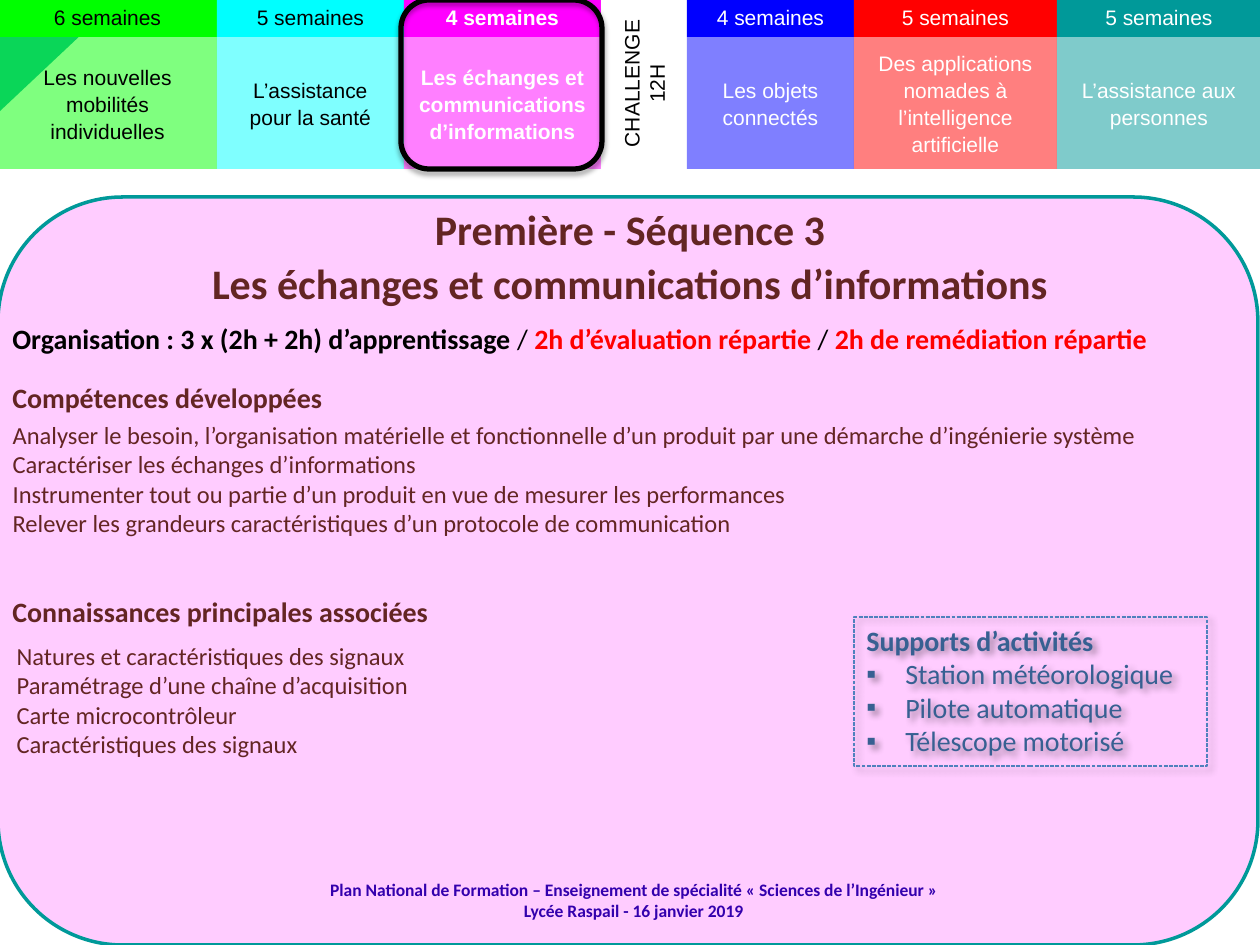
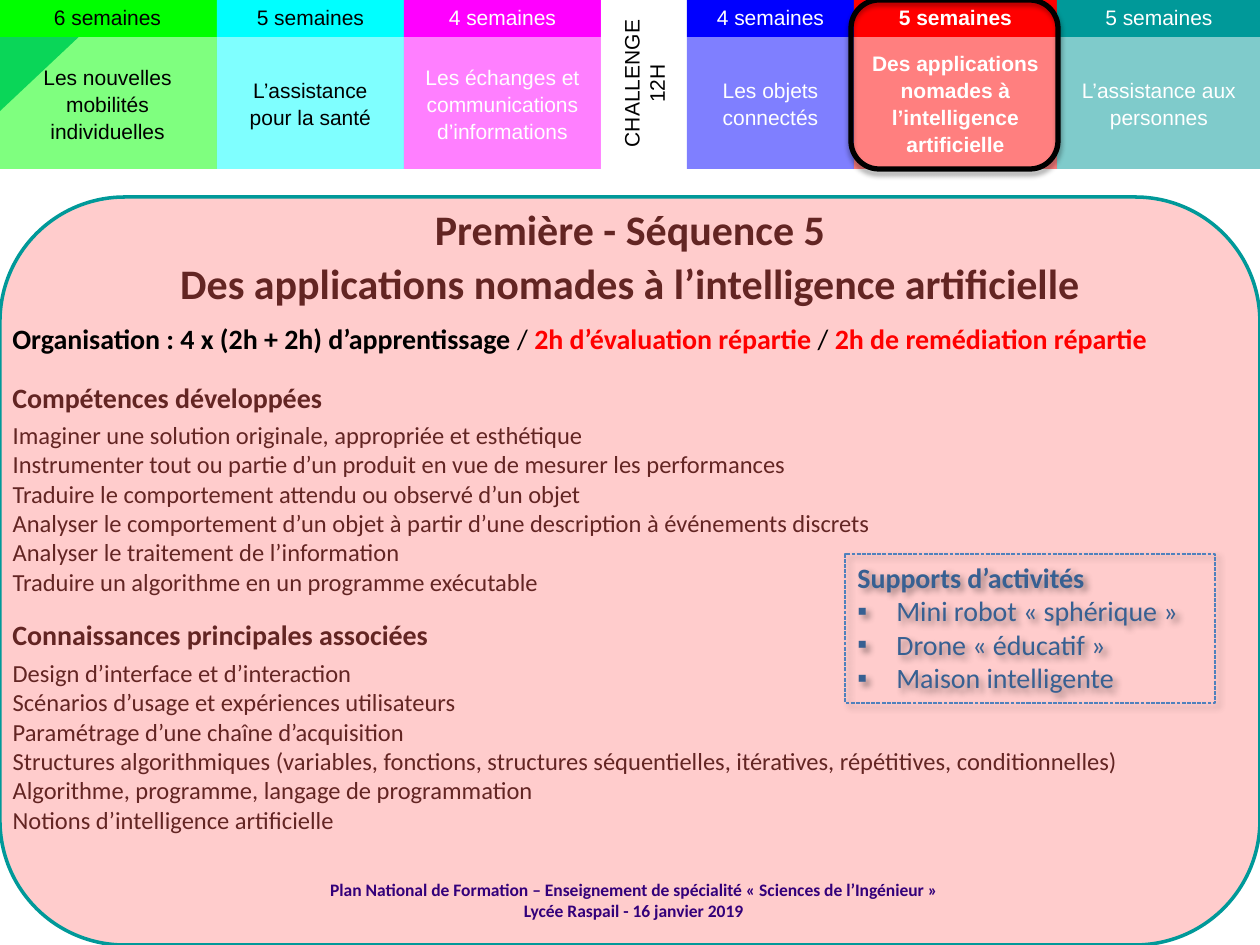
from lxml.etree import SubElement
from pptx import Presentation
from pptx.dml.color import RGBColor
from pptx.enum.dml import MSO_LINE
from pptx.enum.shapes import MSO_SHAPE as Shape
from pptx.enum.text import MSO_ANCHOR as Anchor, MSO_AUTO_SIZE as AutoSize, PP_ALIGN as Align
from pptx.oxml.ns import qn
from pptx.util import Pt

# Content: year timeline as (width, duration, theme, colour, text colour)
TIMELINE = [
    (219, "6 semaines", "Les nouvelles mobilités individuelles", "00FF00", "000000"),
    (187, "5 semaines", "L’assistance pour la santé", "00FFFF", "000000"),
    (197, "4 semaines", "Les échanges et communications d’informations", "FF00FF", "FFFFFF"),
    (86, None, "CHALLENGE 12H", "FFFFFF", "000000"),
    (167, "4 semaines", "Les objets connectés", "0000FF", "FFFFFF"),
    (203, "5 semaines", "Des applications nomades à l’intelligence artificielle", "FF0000", "FFFFFF"),
    (204, "5 semaines", "L’assistance aux personnes", "009999", "FFFFFF"),
]
FOOTER = [
    "Plan National de Formation – Enseignement de spécialité « Sciences de l’Ingénieur »",
    "Lycée Raspail - 16 janvier 2019",
]
SEQUENCES = [
    {
        "number": 3, "column": 2, "sessions": 3, "panel_left": -2,
        "theme": "Les échanges et communications d’informations",
        "skills": [
            "Analyser le besoin, l’organisation matérielle et fonctionnelle d’un produit "
            "par une démarche d’ingénierie système",
            "Caractériser les échanges d’informations",
            "Instrumenter tout ou partie d’un produit en vue de mesurer les performances",
            "Relever les grandeurs caractéristiques d’un protocole de communication",
        ],
        "knowledge": [
            "Natures et caractéristiques des signaux",
            "Paramétrage d’une chaîne d’acquisition",
            "Carte microcontrôleur",
            "Caractéristiques des signaux",
        ],
        "knowledge_heading_top": 588, "knowledge_at": (4, 634),
        "supports": ["Station météorologique", "Pilote automatique", "Télescope motorisé"],
        "supports_at": (854, 617, 353, 149),
    },
    {
        "number": 5, "column": 5, "sessions": 4, "panel_left": 0,
        "theme": "Des applications nomades à l’intelligence artificielle",
        "skills": [
            "Imaginer une solution originale, appropriée et esthétique",
            "Instrumenter tout ou partie d’un produit en vue de mesurer les performances",
            "Traduire le comportement attendu ou observé d’un objet",
            "Analyser le comportement d’un objet à partir d’une description à événements discrets",
            "Analyser le traitement de l’information",
            "Traduire un algorithme en un programme exécutable",
        ],
        "knowledge": [
            "Design d’interface et d’interaction",
            "Scénarios d’usage et expériences utilisateurs",
            "Paramétrage d’une chaîne d’acquisition",
            "Structures algorithmiques (variables, fonctions, structures séquentielles, "
            "itératives, répétitives, conditionnelles)",
            "Algorithme, programme, langage de programmation",
            "Notions d’intelligence artificielle",
        ],
        "knowledge_heading_top": 611, "knowledge_at": (0, 651),
        "supports": ["Mini robot « sphérique »", "Drone « éducatif »", "Maison intelligente"],
        "supports_at": (845, 554, 370, 149),
    },
]

# Shared style, lengths in px
PX_PER_INCH = 126
WIDTH, HEIGHT = 1260, 945
HEADER_TOP, HEADER_BOTTOM, THEME_BOTTOM = -2, 37, 169
PANEL_TOP = 197
BROWN, TEAL, RED, BLACK = "632523", "009999", "FF0000", "000000"


def px(length):
    return round(length * 914400 / PX_PER_INCH)


def rgb(code):
    return RGBColor.from_string(code)


def place(shape, at):
    shape.left, shape.top, shape.width, shape.height = map(px, at)


def write(shape, lines, size=14, color=BROWN, bold=False, font="Calibri", align=Align.LEFT,
          anchor=Anchor.TOP, spacing=None, bullet=False, inset=None):
    """Fill a shape with paragraphs; a line is a string or a list of (text, colour, bold)."""
    frame = shape.text_frame
    frame.word_wrap, frame.auto_size, frame.vertical_anchor = True, AutoSize.NONE, anchor
    if inset is not None:
        frame.margin_left = frame.margin_right = frame.margin_top = frame.margin_bottom = inset
    for index, line in enumerate(lines):
        paragraph = frame.paragraphs[0] if index == 0 else frame.add_paragraph()
        bulleted = bullet and index > 0
        properties = paragraph._p.get_or_add_pPr()
        properties.set("marL", str(px(39) if bulleted else 0))
        properties.set("indent", str(px(-39) if bulleted else 0))
        if bulleted:
            SubElement(properties, qn("a:buFont")).set("typeface", "Arial")
            SubElement(properties, qn("a:buChar")).set("char", "▪")
        else:
            SubElement(properties, qn("a:buNone"))
        paragraph.alignment = align
        paragraph.space_before = Pt(0)
        if spacing:
            paragraph.line_spacing = spacing
        parts = [(line, color, bold and not bulleted)] if isinstance(line, str) else line
        for text, part_color, part_bold in parts:
            run = paragraph.add_run()
            run.text = text
            run.font.size, run.font.name, run.font.bold = Pt(size), font, part_bold
            run.font.color.rgb = rgb(part_color)


def add_shape(slide, preset, at, fill=None, opacity=100, line=None, line_width=1):
    shape = slide.shapes.add_shape(preset, *map(px, at))
    shape.shadow.inherit = False
    if fill:
        shape.fill.solid()
        shape.fill.fore_color.rgb = rgb(fill)
        if opacity < 100:
            tint = shape._element.spPr.find(qn("a:solidFill"))[0]
            SubElement(tint, qn("a:alpha")).set("val", str(opacity * 1000))
    else:
        shape.fill.background()
    if line:
        shape.line.color.rgb = rgb(line)
        shape.line.width = Pt(line_width)
    else:
        shape.line.fill.background()
    return shape


def add_shadow(shape, opacity, blur, distance, angle):
    effects = shape._element.spPr.find(qn("a:effectLst"))
    shadow = SubElement(effects, qn("a:outerShdw"), blurRad=str(Pt(blur)), dist=str(Pt(distance)),
                        dir=str(angle * 60000), algn="tl", rotWithShape="0")
    tint = SubElement(shadow, qn("a:srgbClr"), val=BLACK)
    SubElement(tint, qn("a:alpha"), val=str(opacity * 1000))


def add_text(slide, at, lines, **style):
    box = slide.shapes.add_textbox(*map(px, at))
    write(box, lines, **style)


def fill_placeholder(slide, placeholder, at, lines, **style):
    """Bring a placeholder in front of the panel, then fill it."""
    slide.shapes._spTree.append(placeholder._element)
    place(placeholder, at)
    write(placeholder, lines, **style)


def add_backdrop(slide, panel_left, panel_color):
    corner = add_shape(slide, Shape.ISOSCELES_TRIANGLE, (0, 0, 118, 111), "16AEB2")
    corner.adjustments[0] = 1
    corner.rotation = 180
    add_text(slide, (300, 875, 667, 50), FOOTER, size=10, color="000099", bold=True,
             align=Align.CENTER, anchor=Anchor.MIDDLE, inset=0)
    add_shape(slide, Shape.ROUNDED_RECTANGLE, (panel_left, PANEL_TOP, WIDTH, HEIGHT - PANEL_TOP),
              panel_color, 20, TEAL, 2)


def add_timeline(slide, current):
    left = -2
    for index, (width, duration, theme, color, text_color) in enumerate(TIMELINE):
        style = dict(size=12, font="Arial", color=text_color, bold=index == current,
                     align=Align.CENTER, anchor=Anchor.MIDDLE)
        top = HEADER_BOTTOM if duration else HEADER_TOP
        cell = add_shape(slide, Shape.RECTANGLE, (left, top, width, THEME_BOTTOM - top), color, 50)
        write(cell, [theme], spacing=1.07 if duration else None, **style)
        if duration:
            header = add_shape(slide, Shape.RECTANGLE,
                               (left, HEADER_TOP, width, HEADER_BOTTOM - HEADER_TOP), color)
            write(header, [duration], **style)
        else:
            cell.text_frame._txBody.bodyPr.set("vert", "vert270")
        if index == current:
            ring_at = (left - 3, 0, width + 4, THEME_BOTTOM)
        left += width
    ring = add_shape(slide, Shape.ROUNDED_RECTANGLE, ring_at, line=BLACK, line_width=3)
    add_shadow(ring, 35, 3.1, 1.8, 90)


def add_sequence(deck, sequence):
    slide = deck.slides.add_slide(deck.slide_layouts[3])
    title, skills, knowledge = slide.placeholders
    add_backdrop(slide, sequence["panel_left"], TIMELINE[sequence["column"]][3])

    # Title and organisation
    fill_placeholder(slide, title, (0, PANEL_TOP, WIDTH, 118),
                     [f"Première - Séquence {sequence['number']}", sequence["theme"]],
                     size=24, bold=True, align=Align.CENTER)
    title.text_frame.paragraphs[1].line_spacing = 1.07
    organisation = [
        (f"Organisation : {sequence['sessions']} x (2h + 2h) d’apprentissage ", BLACK, True),
        ("/ ", BLACK, False), ("2h d’évaluation répartie ", RED, True),
        ("/ ", BLACK, False), ("2h de remédiation répartie", RED, True),
    ]
    add_text(slide, (0, 315, WIDTH, 47), [organisation], size=16, anchor=Anchor.MIDDLE)

    # Skills and knowledge
    blocks = [
        ("Compétences développées", 374, skills, (0, 413), sequence["skills"]),
        ("Connaissances principales associées", sequence["knowledge_heading_top"],
         knowledge, sequence["knowledge_at"], sequence["knowledge"]),
    ]
    for heading, heading_top, placeholder, (left, top), items in blocks:
        add_text(slide, (0, heading_top, WIDTH, 47), [heading], size=16, bold=True)
        height = 13 + 59 * len(items) // 2
        fill_placeholder(slide, placeholder, (left, top, WIDTH, height), items,
                         anchor=Anchor.MIDDLE)

    add_timeline(slide, sequence["column"])

    # Activity supports
    supports = add_shape(slide, Shape.RECTANGLE, sequence["supports_at"],
                         line="4F81BD", line_width=0.75)
    supports.line.dash_style = MSO_LINE.SQUARE_DOT
    add_shadow(supports, 40, 4, 3, 45)
    write(supports, ["Supports d’activités", *sequence["supports"]], size=16, color="376092",
          bold=True, bullet=True)


def main():
    deck = Presentation()
    deck.slide_width, deck.slide_height = px(WIDTH), px(HEIGHT)
    for sequence in SEQUENCES:
        add_sequence(deck, sequence)
    deck.save("out.pptx")


if __name__ == "__main__":
    main()
